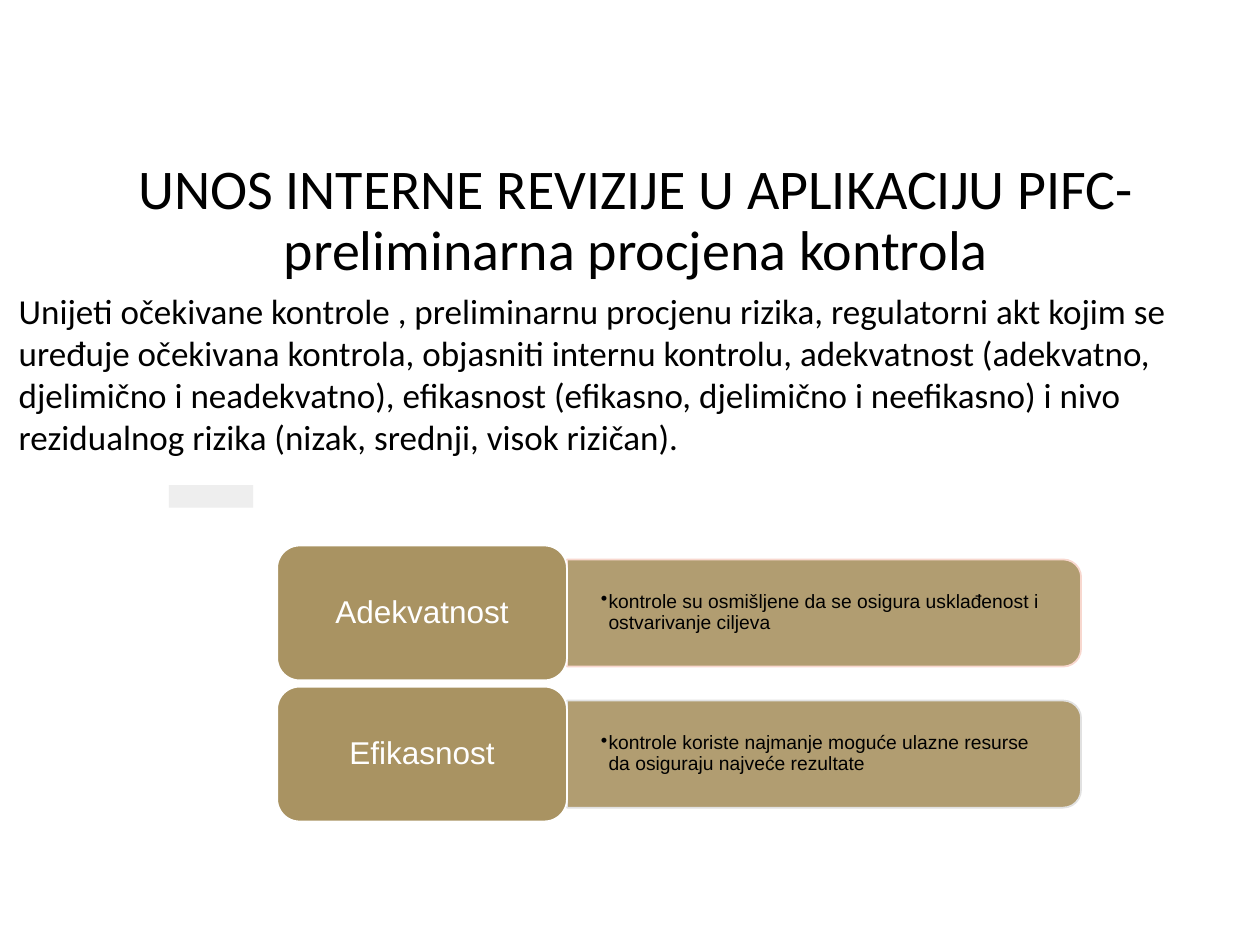
import pptx
import pptx.util
from lxml import etree
from pptx.dml.color import RGBColor
from pptx.enum.shapes import MSO_SHAPE
from pptx.enum.text import MSO_ANCHOR, MSO_AUTO_SIZE, PP_ALIGN
from pptx.oxml.ns import qn
from pptx.util import Inches, Pt

BLACK = RGBColor(0x00, 0x00, 0x00)
WHITE = RGBColor(0xFF, 0xFF, 0xFF)
GOLD = RGBColor(0xA9, 0x93, 0x62)
LIGHT_GRAY = RGBColor(0xEE, 0xEE, 0xEE)
PEACH = RGBColor(0xF8, 0xD7, 0xCE)
SILVER = RGBColor(0xE1, 0xE1, 0xE1)

TITLE = "UNOS INTERNE REVIZIJE U APLIKACIJU PIFC-preliminarna procjena kontrola"
BODY = (
    "Unijeti očekivane kontrole , preliminarnu procjenu rizika, regulatorni akt "
    "kojim se uređuje očekivana kontrola, objasniti internu kontrolu, adekvatnost "
    "(adekvatno, djelimično i neadekvatno), efikasnost (efikasno, djelimično i "
    "neefikasno) i nivo rezidualnog rizika (nizak, srednji, visok rizičan)."
)
CRITERIA = [
    ("Adekvatnost", "kontrole su osmišljene da se osigura usklađenost i ostvarivanje ciljeva", PEACH),
    ("Efikasnost", "kontrole koriste najmanje moguće ulazne resurse da osiguraju najveće rezultate", SILVER),
]

TITLE_FONT = {"name": "Calibri", "size": Pt(32)}
BODY_FONT = {"name": "Calibri", "size": Pt(20)}
LABEL_FONT = {"name": "Arial", "size": Pt(18)}
DETAIL_FONT = {"name": "Arial", "size": Pt(11)}

ROWS_LEFT, ROWS_TOP, ROW_PITCH = 2.2, 4.33, 1.12
LABEL_W, LABEL_H = 2.3, 1.07
PANEL_W, PANEL_H = 4.08, 0.85
DETAIL_W, DETAIL_H = 4.04, 0.77


def write(shape, text, font, color, align=PP_ALIGN.LEFT, anchor=MSO_ANCHOR.TOP,
          spacing=None, margins=(0.1, 0.05), bullet=False):
    tf = shape.text_frame
    mx, my = (Inches(m) for m in margins)
    frame = {"word_wrap": True, "auto_size": MSO_AUTO_SIZE.NONE, "vertical_anchor": anchor,
             "margin_left": mx, "margin_right": mx, "margin_top": my, "margin_bottom": my}
    for key, value in frame.items():
        setattr(tf, key, value)
    p = tf.paragraphs[0]
    if bullet:
        pPr = p._p.get_or_add_pPr()
        pPr.set("marL", str(Inches(0.06)))
        pPr.set("indent", str(Inches(-0.06)))
        etree.SubElement(pPr, qn("a:buChar")).set("char", "•")
    p.alignment = align
    p.line_spacing = spacing
    r = p.add_run()
    r.text = text
    for key, value in font.items():
        setattr(r.font, key, value)
    r.font.color.rgb = color


def add_filled(s, kind, box, fill, line=None):
    sp = s.shapes.add_shape(kind, *map(Inches, box))
    sp.shadow.inherit = False
    sp.fill.solid()
    sp.fill.fore_color.rgb = fill
    if line is None:
        sp.line.fill.background()
    else:
        sp.line.color.rgb = line
        sp.line.width = Pt(1)
    return sp


def add_criterion(s, top, label, detail, outline):
    middle = top + LABEL_H / 2
    seam = ROWS_LEFT + LABEL_W

    # The panel is an upright shape turned a quarter, so its box is swapped around its centre.
    panel = add_filled(s, MSO_SHAPE.ROUND_2_SAME_RECTANGLE,
                       (seam + PANEL_W / 2 - PANEL_H / 2, middle - PANEL_W / 2, PANEL_H, PANEL_W),
                       GOLD, outline)
    panel.rotation = 90
    color = panel.fill._xPr.find(qn("a:solidFill"))[0]
    etree.SubElement(color, qn("a:alpha")).set("val", "90000")

    box = (seam, middle - DETAIL_H / 2, DETAIL_W, DETAIL_H)
    write(s.shapes.add_textbox(*map(Inches, box)), detail, DETAIL_FONT, BLACK,
          anchor=MSO_ANCHOR.MIDDLE, spacing=0.9, margins=(0.27, 0.14), bullet=True)

    tile = add_filled(s, MSO_SHAPE.ROUNDED_RECTANGLE, (ROWS_LEFT, top, LABEL_W, LABEL_H), GOLD, WHITE)
    write(tile, label, LABEL_FONT, WHITE, PP_ALIGN.CENTER, MSO_ANCHOR.MIDDLE, 0.9, (0.07, 0.04))


def main():
    prs = pptx.Presentation()
    prs.slide_width, prs.slide_height = Inches(10), Inches(7.5)
    s = prs.slides.add_slide(prs.slide_layouts[5])

    title = s.shapes.title
    title.left, title.top, title.width, title.height = map(Inches, (0.05, 1.15, 10, 1.14))
    write(title, TITLE, TITLE_FONT, BLACK, PP_ALIGN.CENTER, MSO_ANCHOR.BOTTOM, 0.9)

    add_filled(s, MSO_SHAPE.RECTANGLE, (1.34, 3.85, 0.67, 0.18), LIGHT_GRAY)
    body = s.shapes.add_textbox(*map(Inches, (0.05, 2.25, 9.88, 1.45)))
    write(body, BODY, BODY_FONT, BLACK)

    for i, criterion in enumerate(CRITERIA):
        add_criterion(s, ROWS_TOP + i * ROW_PITCH, *criterion)

    prs.save("out.pptx")


if __name__ == "__main__":
    main()
